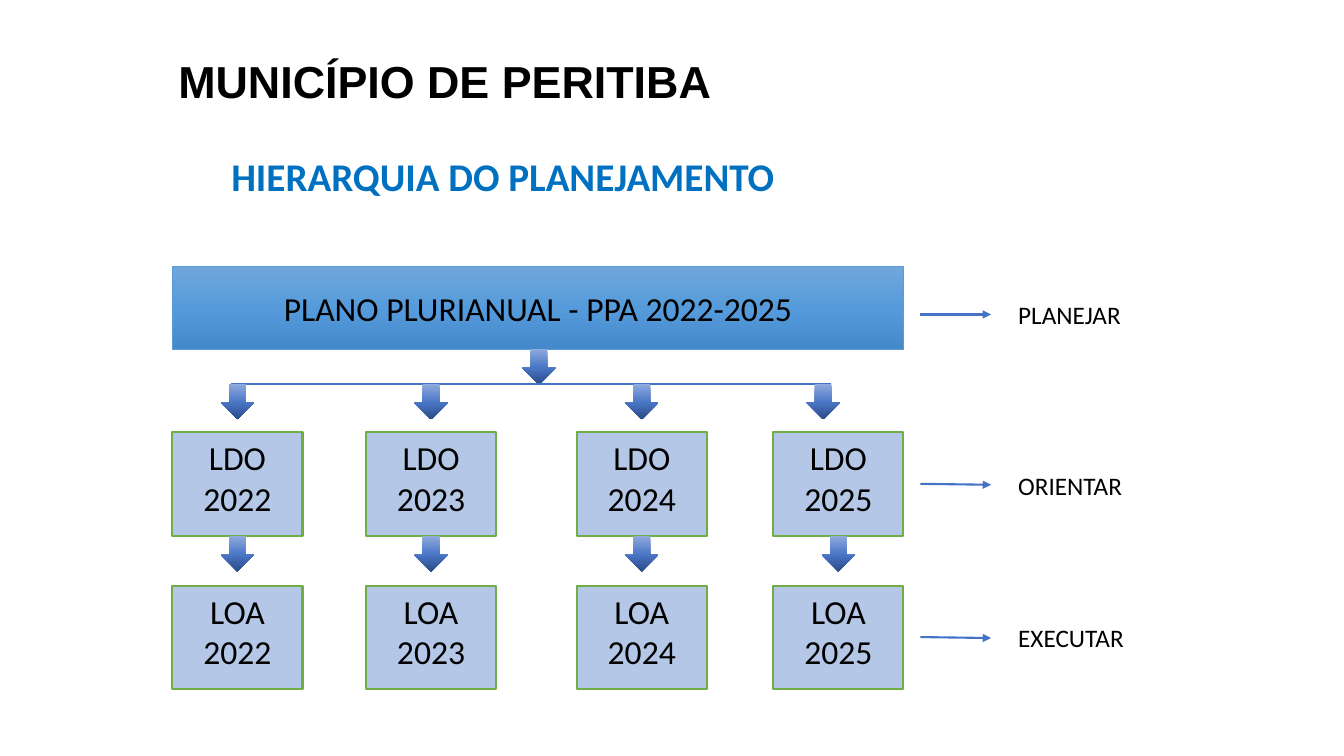
from dataclasses import dataclass
from typing import NamedTuple, Optional

from lxml.etree import SubElement
from pptx import Presentation
from pptx.dml.color import RGBColor
from pptx.enum.shapes import MSO_CONNECTOR as Link, MSO_SHAPE as Preset
from pptx.enum.text import MSO_ANCHOR as Anchor, PP_ALIGN as Align
from pptx.oxml.ns import qn
from pptx.util import Inches, Pt

WIDTH, HEIGHT = Inches(13.33), Inches(7.5)
BLACK, LINK_BLUE = "000000", "4472C4"
PLAN_STOPS = ((0, "71A6DB"), (50, "559BDB"), (100, "448ACA"))
ARROW_STOPS = ((0, "8FAADC"), (52, "4A76C6"), (100, "2A4B86"))
CARD_W, CARD_H = 9.68, 13.73
ARROW_W, ARROW_H = 2.48, 4.67
PLAN_BOTTOM, BRANCH_Y = 46.2, 50.8
LDO_TOP, LOA_TOP = 57.2, 77.47


class Box(NamedTuple):
    """Left, top, width and height in percent of the slide."""
    left: float
    top: float
    width: float
    height: float

    def emu(self):
        return across(self.left), down(self.top), across(self.width), down(self.height)


@dataclass
class Style:
    """Look of a piece of text."""
    size: int
    font: str = "Calibri"
    color: str = BLACK
    bold: bool = False
    align: Align = Align.LEFT
    anchor: Anchor = Anchor.TOP


@dataclass
class Year:
    """One budget year: its column and the middle of its branch arrow."""
    name: str
    left: float
    branch: Optional[float] = None

    @property
    def middle(self) -> float:
        return self.left + CARD_W / 2


@dataclass
class Stage:
    """A planning stage named at the right of its row."""
    name: str
    label_top: float
    start_y: float
    end_y: float


YEARS = (Year("2022", 12.83), Year("2023", 27.23), Year("2024", 42.91),
         Year("2025", 57.54, branch=61.25))
STAGES = (Stage("PLANEJAR", 38.93, 41.6, 41.6),
          Stage("ORIENTAR", 61.6, 64, 64.13),
          Stage("EXECUTAR", 81.6, 84.27, 84.4))


def across(share: float) -> int:
    """Turn a percentage of the slide width into a length."""
    return round(WIDTH * share / 100)


def down(share: float) -> int:
    """Turn a percentage of the slide height into a length."""
    return round(HEIGHT * share / 100)


def rgb(code: str) -> RGBColor:
    """Read a hex colour."""
    return RGBColor.from_string(code)


def write(holder, text: str, style: Style) -> None:
    """Put formatted text in a shape."""
    frame = holder.text_frame
    frame.text = text
    frame.word_wrap = True
    frame.vertical_anchor = style.anchor
    for paragraph in frame.paragraphs:
        paragraph.alignment = style.align
        for run in paragraph.runs:
            run.font.name, run.font.size = style.font, Pt(style.size)
            run.font.bold, run.font.color.rgb = style.bold, rgb(style.color)


def add_text(slide, box: Box, text: str, style: Style) -> None:
    """Add a text box."""
    write(slide.shapes.add_textbox(*box.emu()), text, style)


def add_block(slide, preset: Preset, box: Box, border: Optional[str] = None,
              weight: float = 0):
    """Add a preset shape without shadow."""
    block = slide.shapes.add_shape(preset, *box.emu())
    block.shadow.inherit = False
    if border:
        block.line.color.rgb, block.line.width = rgb(border), Pt(weight)
    else:
        block.line.fill.background()
    return block


def shade(block, stops) -> None:
    """Fill a shape with a gradient from top to bottom."""
    block.fill.gradient()
    block.fill.gradient_angle = 270
    stop_list = block.element.spPr.find(qn("a:gradFill")).find(qn("a:gsLst"))
    stop_list.clear()
    for share, color in stops:
        stop = SubElement(stop_list, qn("a:gs"), pos=str(share * 1000))
        SubElement(stop, qn("a:srgbClr"), val=color)


def add_down_arrow(slide, middle: float, top: float) -> None:
    """Add a block arrow centred on a column."""
    box = Box(middle - ARROW_W / 2, top, ARROW_W, ARROW_H)
    shade(add_block(slide, Preset.DOWN_ARROW, box), ARROW_STOPS)


def add_line(slide, x1: float, y1: float, x2: float, y2: float, arrow: bool = False) -> None:
    """Add a straight line, with an arrowhead at its end if asked."""
    line = slide.shapes.add_connector(Link.STRAIGHT, across(x1), down(y1), across(x2), down(y2))
    line.line.color.rgb, line.line.width = rgb(LINK_BLUE), Pt(1.5)
    if arrow:
        SubElement(line.line._get_or_add_ln(), qn("a:tailEnd"), type="triangle")
    SubElement(line.element.spPr, qn("a:effectLst"))


def add_card(slide, plan: str, year: Year, top: float) -> None:
    """Add the card of a yearly plan."""
    card = add_block(slide, Preset.RECTANGLE, Box(year.left, top, CARD_W, CARD_H), "70AD47", 1.5)
    card.fill.solid()
    card.fill.fore_color.rgb = rgb("B4C7E7")
    write(card, f"{plan}\n{year.name}", Style(24, align=Align.CENTER))


def main() -> None:
    """Build the planning hierarchy slide."""
    deck = Presentation()
    deck.slide_width, deck.slide_height = WIDTH, HEIGHT
    slide = deck.slides.add_slide(deck.slide_layouts[6])

    add_text(slide, Box(12.53, 6.4, 60.24, 8.53), "MUNICÍPIO DE PERITIBA",
             Style(32, "Arial", bold=True, anchor=Anchor.MIDDLE))
    add_text(slide, Box(12.38, 19.47, 50.04, 9.47), "HIERARQUIA DO PLANEJAMENTO",
             Style(28, color="0070C0", bold=True, align=Align.CENTER))

    plan = add_block(slide, Preset.RECTANGLE, Box(12.83, 35.2, 54.4, 11.07), "5B9BD5", 0.5)
    shade(plan, PLAN_STOPS)
    write(plan, "PLANO PLURIANUAL - PPA 2022-2025",
          Style(24, align=Align.CENTER, anchor=Anchor.MIDDLE))
    add_down_arrow(slide, 40.1, PLAN_BOTTOM)
    add_line(slide, 17.18, BRANCH_Y, 61.82, BRANCH_Y)

    for year in YEARS:
        add_card(slide, "LDO", year, LDO_TOP)
        add_card(slide, "LOA", year, LOA_TOP)
        add_down_arrow(slide, year.branch or year.middle, BRANCH_Y)
        add_down_arrow(slide, year.middle, LDO_TOP + CARD_H)

    for stage in STAGES:
        add_line(slide, 68.49, stage.start_y, 73.74, stage.end_y, arrow=True)
        add_text(slide, Box(75.02, stage.label_top, 10.28, 5.33), stage.name, Style(18))

    deck.save("out.pptx")


if __name__ == "__main__":
    main()
